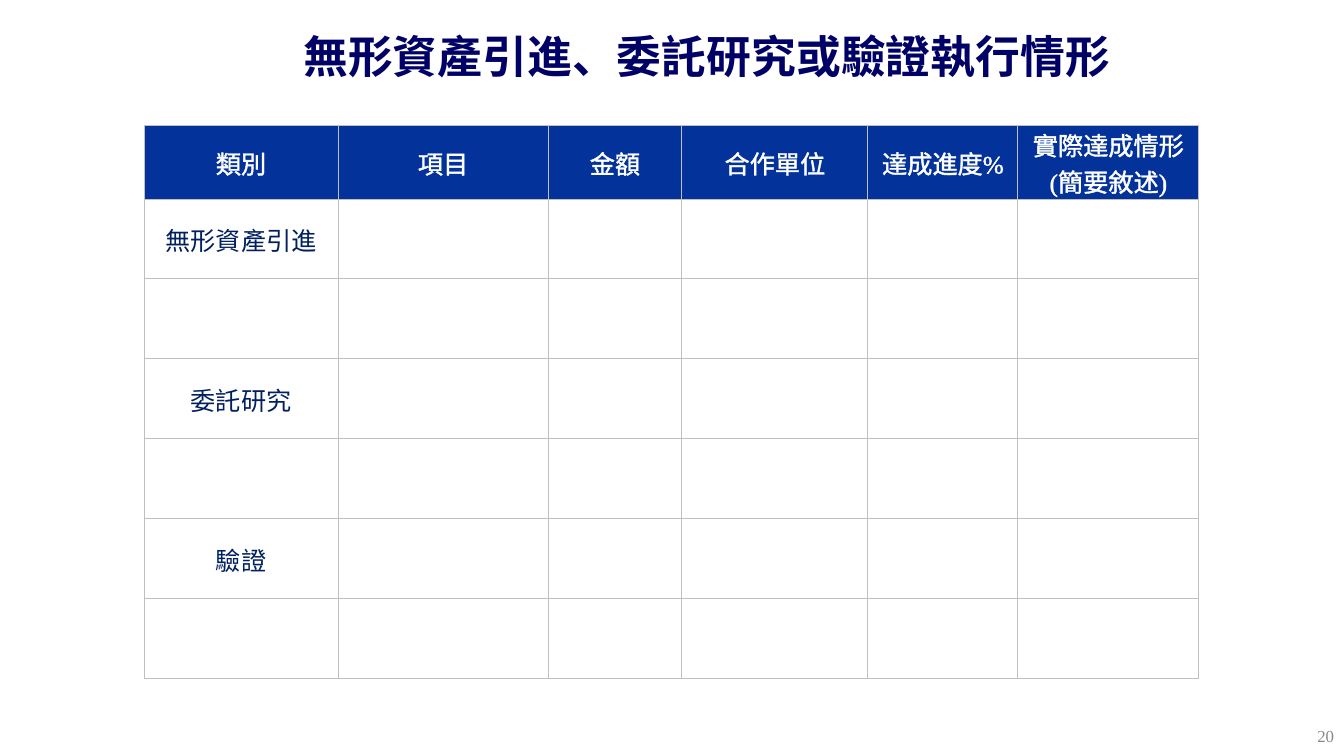
import pptx
import pptx.dml.color
import pptx.enum.text
import pptx.oxml
import pptx.oxml.ns
import pptx.util

TITLE = "無形資產引進、委託研究或驗證執行情形"
PAGE_NUMBER = "20"
HEADERS = ["類別", "項目", "金額", "合作單位", "達成進度%", "實際達成情形\n(簡要敘述)"]
CATEGORIES = ["無形資產引進", "", "委託研究", "", "驗證", ""]

COLUMN_WIDTHS = [194, 210, 134, 186, 150, 181]
HEADER_HEIGHT, ROW_HEIGHT = 73, 80
TABLE_LEFT, TABLE_TOP = 144, 125
FONT = "Times New Roman"
ALIGN = pptx.enum.text.PP_ALIGN
MIDDLE = pptx.enum.text.MSO_ANCHOR.MIDDLE
NAMESPACE = pptx.oxml.ns.nsdecls("a")


def px(length):
    return pptx.util.Emu(round(length * 914400 / 100.8))


def color(value):
    return pptx.dml.color.RGBColor.from_string(value)


def write(text_frame, text, size, value, align, bold=False):
    text_frame.text = text
    for paragraph in text_frame.paragraphs:
        paragraph.alignment = align
        for run in paragraph.runs:
            run.font.name = FONT
            run.font.size = pptx.util.Pt(size)
            run.font.bold = bold
            run.font.color.rgb = color(value)


def line_xml(tag, value):
    return pptx.oxml.parse_xml(
        f'<a:{tag} {NAMESPACE} w="9525"><a:solidFill>'
        f'<a:srgbClr val="{value}"/></a:solidFill></a:{tag}>')


def style_cell(cell, fill):
    properties = cell._tc.get_or_add_tcPr()
    for side in ("lnL", "lnR", "lnT", "lnB"):
        properties.append(line_xml(side, "BFBFBF"))
    cell.fill.solid()
    cell.fill.fore_color.rgb = color(fill)
    cell.vertical_anchor = MIDDLE
    cell.margin_left = cell.margin_right = cell.margin_top = px(1)
    cell.margin_bottom = 0


presentation = pptx.Presentation()
presentation.slide_width, presentation.slide_height = px(1344), px(756)
slide = presentation.slides.add_slide(presentation.slide_layouts[5])

# Title
title = slide.shapes.title
title.left, title.top, title.width, title.height = px(102), px(16), px(1210), px(80)
title.text_frame.vertical_anchor = MIDDLE
write(title.text_frame, TITLE, 32, "000066", ALIGN.CENTER, bold=True)

# Table
rows = [HEADERS] + [[name] + [""] * (len(HEADERS) - 1) for name in CATEGORIES]
table = slide.shapes.add_table(
    len(rows), len(HEADERS), px(TABLE_LEFT), px(TABLE_TOP), px(sum(COLUMN_WIDTHS)),
    px(HEADER_HEIGHT + ROW_HEIGHT * len(CATEGORIES))).table
for column, width in zip(table.columns, COLUMN_WIDTHS):
    column.width = px(width)
for row_index, texts in enumerate(rows):
    is_header = row_index == 0
    table.rows[row_index].height = px(HEADER_HEIGHT if is_header else ROW_HEIGHT)
    for column_index, text in enumerate(texts):
        cell = table.cell(row_index, column_index)
        style_cell(cell, "02329A" if is_header else "FFFFFF")
        write(cell.text_frame, text, 18, "FFFFFF" if is_header else "002060", ALIGN.CENTER)

# White outline on the header text
for cell in table.rows[0].cells:
    for paragraph in cell.text_frame.paragraphs:
        for run in paragraph.runs:
            run.font._element.insert(0, line_xml("ln", "FFFFFF"))

# Page number
number_box = slide.shapes.add_textbox(px(1030), px(716), px(314), px(40))
number_box.text_frame.word_wrap = True
number_box.text_frame.vertical_anchor = MIDDLE
write(number_box.text_frame, PAGE_NUMBER, 12, "898989", ALIGN.RIGHT)

presentation.save("out.pptx")
